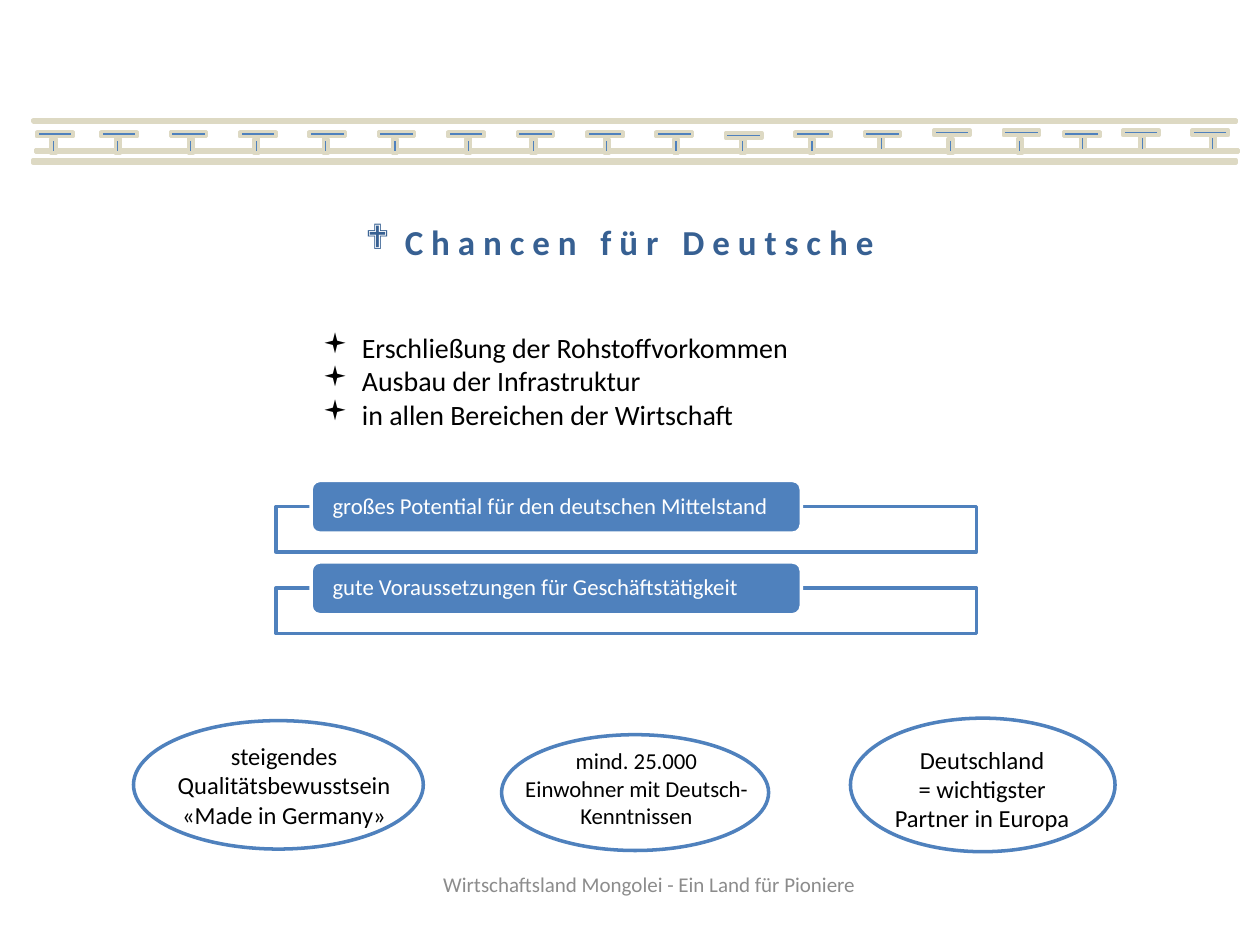
from pptx import Presentation
from pptx.dml.color import RGBColor
from pptx.enum.shapes import MSO_SHAPE as SHAPE
from pptx.enum.text import MSO_ANCHOR as ANCHOR, MSO_AUTO_SIZE as AUTOSIZE, PP_ALIGN as ALIGN
from pptx.oxml.ns import qn
from pptx.util import Pt
from lxml import etree

BLUE = RGBColor(0x4F, 0x81, 0xBD)
NAVY = RGBColor(0x37, 0x60, 0x92)
SAND = RGBColor(0xDD, 0xD9, 0xC3)
GREY = RGBColor(0x8C, 0x8C, 0x8C)
WHITE = RGBColor(0xFF, 0xFF, 0xFF)
BLACK = RGBColor(0x00, 0x00, 0x00)


def write(sp, lines, size=14, color=BLACK, bold=False, align=ALIGN.LEFT,
          anchor=ANCHOR.TOP, bullet=None, spacing=1.0):
    """Fill a shape with one paragraph per line."""
    tf = sp.text_frame
    tf.word_wrap = True
    tf.auto_size = AUTOSIZE.NONE
    tf.vertical_anchor = anchor
    for i, line in enumerate(lines):
        p = tf.paragraphs[0] if i == 0 else tf.add_paragraph()
        if bullet:
            pPr = p._p.get_or_add_pPr()
            pPr.set("marL", str(Pt(22.5)))
            pPr.set("indent", str(-Pt(22.5)))
            etree.SubElement(pPr, qn("a:buFont"), typeface="Wingdings")
            etree.SubElement(pPr, qn("a:buChar"), char=bullet)
        p.alignment = align
        p.space_before = Pt(0)
        p.line_spacing = spacing
        r = p.add_run()
        r.text = line
        r.font.name = "Calibri"
        r.font.size = Pt(size)
        r.font.bold = bold
        r.font.color.rgb = color


def draw(kind, left, top, width, height, fill, line):
    """Add a flat preset shape with a 2 pt outline."""
    sp = s.shapes.add_shape(kind, Pt(left), Pt(top), Pt(width), Pt(height))
    sp.shadow.inherit = False
    sp.fill.solid()
    sp.fill.fore_color.rgb = fill
    sp.line.color.rgb = line
    sp.line.width = Pt(2)
    return sp


prs = Presentation()
prs.slide_width, prs.slide_height = Pt(720), Pt(540)
s = prs.slides.add_slide(prs.slide_layouts[1])

# Footer
sp = s.shapes.add_textbox(Pt(206.6), Pt(491), Pt(329), Pt(28.8))
write(sp, ["Wirtschaftsland Mongolei - Ein Land für Pioniere"], size=12,
      color=GREY, align=ALIGN.CENTER, anchor=ANCHOR.MIDDLE)

# Ornament: three long rails
for left, top, height in [(-105.1, 66.2, 5.8), (-103.7, 82.8, 7.2), (-105.1, 88.6, 7.2)]:
    draw(SHAPE.MATH_MINUS, left, top, 935.3, height, BLUE, SAND)

# Ornament: T-shaped marks, each a crossbar and a post
bar_lefts = [17.3] + [54 + 39.66 * i for i in range(14)] + [604.1, 637.9, 677.5]
bar_tops = [70.6] * 10 + [71.3] + [70.6] * 2 + [69.8] * 2 + [70.6] + [69.8] * 2
post_lefts = [28.8, 65.5, 107.3, 144.7, 184.3, 223.9, 265.7, 303.1, 344.9,
              384.5, 422.6, 462.2, 501.8, 541.4, 581, 617, 650.9, 691.2]
post_tops = [66.2] * 12 + [64.8] + [66.2] * 2 + [64.8] * 3
for bar_left, bar_top, post_left, post_top in zip(bar_lefts, bar_tops, post_lefts, post_tops):
    draw(SHAPE.MATH_MINUS, bar_left, bar_top, 28.1, 12.2, BLUE, SAND)
    draw(SHAPE.MATH_MINUS, post_left, post_top, 3.6, 34.6, BLUE, SAND)

# Title
title = s.shapes.title
title.left, title.top, title.width, title.height = Pt(201.6), Pt(122.4), Pt(364.3), Pt(31.7)
write(title, ["C h a n c e n   f ü r   D e u t s c h e"], size=20, color=NAVY,
      bold=True, bullet="❖")

# Bullet list
body = s.placeholders[1]
body.left, body.top, body.width, body.height = Pt(177.1), Pt(185), Pt(313.2), Pt(65.5)
write(body, ["Erschließung der Rohstoffvorkommen", "Ausbau der Infrastruktur",
             "in allen Bereichen der Wirtschaft"], size=16, bullet="▪")

# Ovals with their captions: oval box, text box, size, lines
ovals = [
    ((76.3, 411.8, 165.6, 73.4), (82.1, 419.8, 160.6, 58.3), 14,
     ["steigendes Qualitätsbewusstsein", "«Made in Germany»"]),
    ((286.6, 419.8, 152.6, 66.2), (292.3, 423.4, 142.6, 54.7), 13,
     ["mind. 25.000 Einwohner mit Deutsch-Kenntnissen"]),
    ((486, 410.4, 151.2, 76.3), (496.1, 421.9, 130.3, 58.3), 14,
     ["Deutschland", "= wichtigster Partner in Europa"]),
]
for oval, caption, size, lines in ovals:
    draw(SHAPE.OVAL, *oval, WHITE, BLUE)
    sp = s.shapes.add_textbox(*[Pt(v) for v in caption])
    write(sp, lines, size=size, align=ALIGN.CENTER)

# Framed statements
statements = ["großes Potential für den deutschen Mittelstand",
              "gute Voraussetzungen für Geschäftstätigkeit"]
for i, text in enumerate(statements):
    top = 274.5 + 46.6 * i
    frame = draw(SHAPE.RECTANGLE, 157.7, top + 15, 400.3, 25.9, WHITE, BLUE)
    color = frame.fill._xPr.find(qn("a:solidFill"))[0]
    etree.SubElement(color, qn("a:alpha"), val="90000")
    label = draw(SHAPE.ROUNDED_RECTANGLE, 177.8, top, 280.1, 30.2, BLUE, WHITE)
    tf = label.text_frame
    tf.margin_left = tf.margin_right = Pt(10.8)
    tf.margin_top = tf.margin_bottom = Pt(0)
    write(label, [text], size=13, color=WHITE, anchor=ANCHOR.MIDDLE, spacing=0.9)

prs.save("out.pptx")
